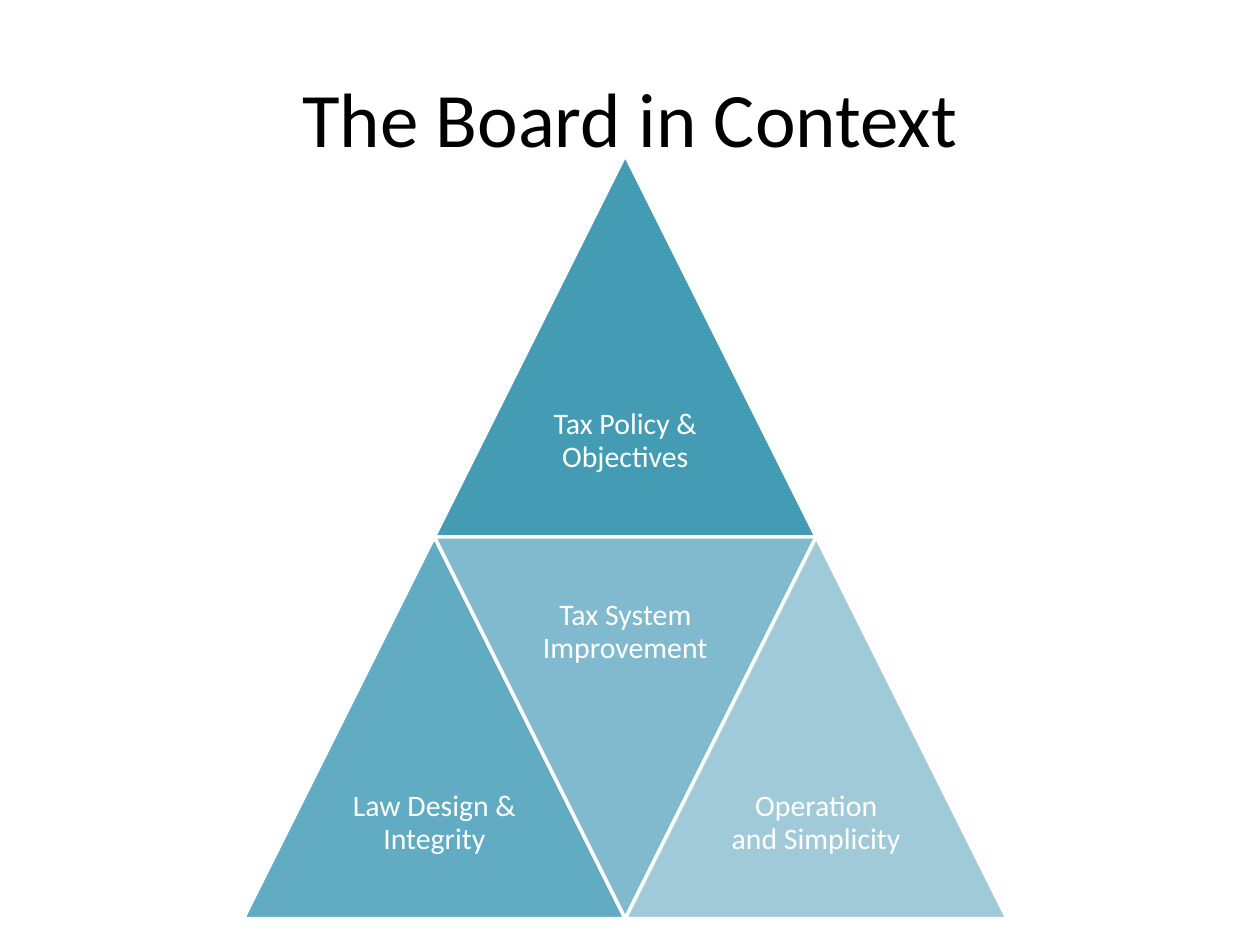
import dataclasses

import pptx
import pptx.dml.color
import pptx.enum.shapes
import pptx.enum.text
import pptx.util

SIDE = 218.2
HALF = SIDE / 2
PYRAMID_LEFT = 139.1
PYRAMID_TOP = 88.6
INSET = 5.4


@dataclasses.dataclass(frozen=True)
class Role:
    label: str
    fill: str
    column: int
    row: int
    inverted: bool = False


ROLES = [
    Role("Tax Policy & Objectives", "449CB4", 1, 0),
    Role("Law Design & Integrity", "61ACC2", 0, 1),
    Role("Tax System Improvement", "81BACE", 1, 1, inverted=True),
    Role("Operation and Simplicity", "A1CAD9", 2, 1),
]


def color(value: str) -> pptx.dml.color.RGBColor:
    return pptx.dml.color.RGBColor.from_string(value)


def place(*lengths: float) -> list[pptx.util.Length]:
    return [pptx.util.Pt(length) for length in lengths]


def apply(target, formats: dict) -> None:
    for attribute, value in formats.items():
        setattr(target, attribute, value)


def write(frame, text: str, size: float, ink: str, spacing: float) -> None:
    frame.text = text
    apply(frame, {
        "word_wrap": True,
        "vertical_anchor": pptx.enum.text.MSO_ANCHOR.MIDDLE,
    })
    paragraph = frame.paragraphs[0]
    apply(paragraph, {
        "alignment": pptx.enum.text.PP_ALIGN.CENTER,
        "line_spacing": spacing,
    })
    font = paragraph.runs[0].font
    apply(font, {"name": "Calibri", "size": pptx.util.Pt(size)})
    font.color.rgb = color(ink)


def draw_role(slide, role: Role) -> None:
    left = PYRAMID_LEFT + role.column * HALF
    top = PYRAMID_TOP + role.row * SIDE
    triangle = slide.shapes.add_shape(
        pptx.enum.shapes.MSO_SHAPE.ISOSCELES_TRIANGLE, *place(left, top, SIDE, SIDE)
    )
    triangle.rotation = 180 if role.inverted else 0
    triangle.shadow.inherit = False
    triangle.fill.solid()
    triangle.fill.fore_color.rgb = color(role.fill)
    triangle.line.color.rgb = color("FFFFFF")
    triangle.line.width = pptx.util.Pt(2)

    label_top = top if role.inverted else top + HALF
    label = slide.shapes.add_textbox(*place(left + HALF / 2, label_top, HALF, HALF))
    sides = ("left", "right", "top", "bottom")
    apply(label.text_frame, {f"margin_{side}": pptx.util.Pt(INSET) for side in sides})
    write(label.text_frame, role.label, 17, "FFFFFF", 0.9)


def main() -> None:
    """Build the slide showing the board's place in the tax system."""
    deck = pptx.Presentation()
    apply(deck, {
        "slide_width": pptx.util.Pt(720),
        "slide_height": pptx.util.Pt(540),
    })
    slide = deck.slides.add_slide(deck.slide_layouts[5])
    heading = slide.shapes.title
    apply(heading, dict(zip(("left", "top", "width", "height"), place(36, 21.6, 648, 90))))
    write(heading.text_frame, "The Board in Context", 44, "000000", 1.0)
    for role in ROLES:
        draw_role(slide, role)
    deck.save("out.pptx")


if __name__ == "__main__":
    main()
